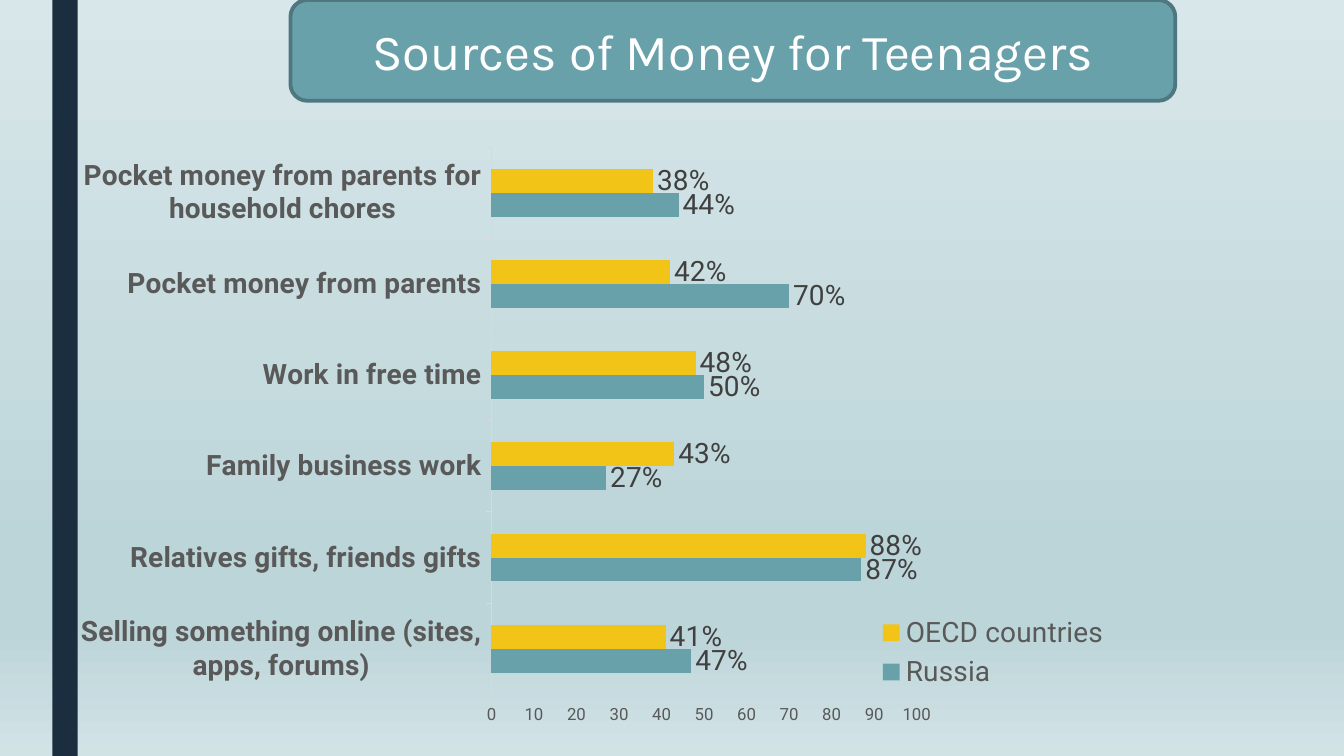
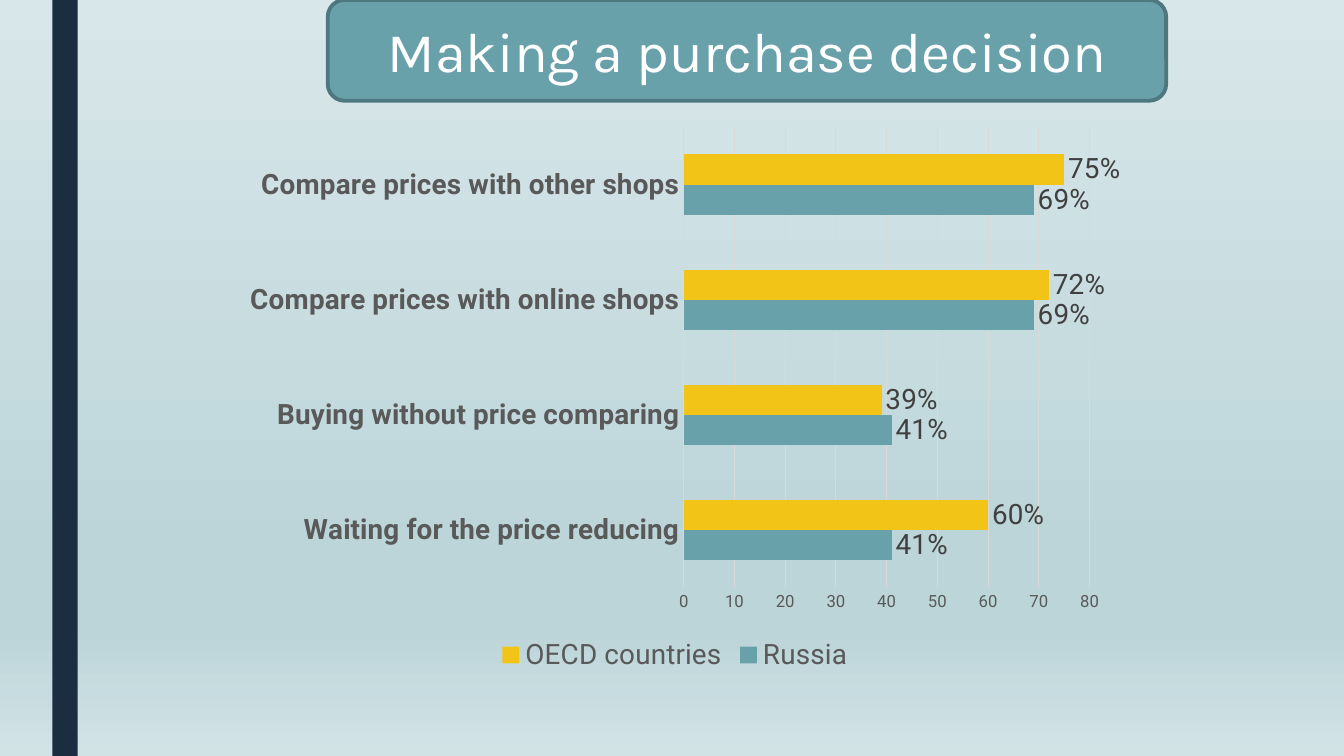
from copy import deepcopy

from lxml import etree
from pptx import Presentation
from pptx import util as u
from pptx.chart.data import CategoryChartData
from pptx.dml.color import RGBColor
from pptx.enum import chart as ch, shapes, text
from pptx.oxml.ns import qn

NAVY = RGBColor(0x1A, 0x2E, 0x40)
TEAL = RGBColor(0x69, 0xA1, 0xAB)
TEAL_EDGE = RGBColor(0x4E, 0x77, 0x7F)
YELLOW = RGBColor(0xF2, 0xC4, 0x18)
WHITE = RGBColor(0xFF, 0xFF, 0xFF)
LABEL_GREY = RGBColor(0x40, 0x40, 0x40)
AXIS_GREY = RGBColor(0x59, 0x59, 0x59)
RULE_GREY = RGBColor(0xD9, 0xD9, 0xD9)
SKY = [
    (0, RGBColor(0xD8, 0xE7, 0xE9)),
    (0.74, RGBColor(0xBC, 0xD5, 0xD9)),
    (0.83, RGBColor(0xBC, 0xD5, 0xD9)),
    (1, RGBColor(0xD2, 0xE3, 0xE6)),
]
SLIDE_W, SLIDE_H = u.Cm(33.87), u.Cm(19.05)
BANNER_H = u.Cm(2.54)
SERIES_COLORS = {"Russia": TEAL, "OECD countries": YELLOW}

BODY = {"name": "Roboto", "size": u.Pt(20)}
LABEL_FONT = BODY | {"color": LABEL_GREY}
LEGEND_FONT = BODY | {"color": AXIS_GREY}
CATEGORY_FONT = LEGEND_FONT | {"bold": True}
SCALE_FONT = LEGEND_FONT | {"size": u.Pt(12), "bold": False}
BANNER_FONT = {"name": "Karla", "color": WHITE}

SLIDES = [
    {
        "title": "Sources of Money for Teenagers",
        "title_size": 36,
        "banner": (7.32, 22.3),
        "frame": (1.93, 3.1, 26.14, 15.16),
        "plot": (0.4, 0.04, 0.41, 0.91),
        "legend": ch.XL_LEGEND_POSITION.RIGHT,
        "legend_box": (0.77, 0.81, 0.24, 0.14),
        "ticks": ch.XL_TICK_MARK.OUTSIDE,
        "grid": False,
        "maximum": 100,
        "categories": [
            "Selling something online (sites, apps, forums)",
            "Relatives gifts, friends gifts",
            "Family business work",
            "Work in free time",
            "Pocket money from parents",
            "Pocket money from parents for household chores",
        ],
        "values": {
            "Russia": [47, 87, 27, 50, 70, 44],
            "OECD countries": [41, 88, 43, 48, 42, 38],
        },
    },
    {
        "title": "Making a purchase decision",
        "title_size": 40,
        "banner": (8.26, 21.13),
        "frame": (5.89, 2.92, 22.35, 14.15),
        "plot": (0.51, 0.02, 0.46, 0.82),
        "legend": ch.XL_LEGEND_POSITION.BOTTOM,
        "legend_box": None,
        "ticks": ch.XL_TICK_MARK.NONE,
        "grid": True,
        "maximum": 80,
        "categories": [
            "Waiting for the price reducing",
            "Buying without price comparing",
            "Compare prices with online shops",
            "Compare prices with other shops",
        ],
        "values": {
            "Russia": [41, 41, 69, 69],
            "OECD countries": [60, 39, 72, 75],
        },
    },
]


def apply(target, formats):
    for name, value in formats.items():
        setattr(target, name, value)


def style_font(font, formats):
    apply(font, {k: v for k, v in formats.items() if k != "color"})
    font.color.rgb = formats["color"]


def style_rule(line):
    line.color.rgb = RULE_GREY
    line.width = u.Pt(0.75)


def paint_background(master):
    fill = master.background.fill
    fill.gradient()
    fill.gradient_angle = 270
    stop_list = master.element.find(".//" + qn("a:gsLst"))
    for _ in SKY[2:]:
        stop_list.append(deepcopy(stop_list[-1]))
    for stop, (position, color) in zip(fill.gradient_stops, SKY):
        stop.position = position
        stop.color.rgb = color


def add_block(slide, kind, box, color):
    block = slide.shapes.add_shape(kind, *box)
    block.shadow.inherit = False
    block.fill.solid()
    block.fill.fore_color.rgb = color
    return block


def add_side_band(slide, master):
    band = add_block(slide, shapes.MSO_SHAPE.RECTANGLE,
                     (u.Cm(1.32), 0, u.Cm(0.64), SLIDE_H), NAVY)
    band.line.fill.background()
    master.element.cSld.spTree.append(band.element)


def add_banner(slide, title, size, left, width):
    banner = add_block(slide, shapes.MSO_SHAPE.ROUNDED_RECTANGLE,
                       (u.Cm(left), 0, u.Cm(width), BANNER_H), TEAL)
    banner.line.color.rgb = TEAL_EDGE
    banner.line.width = u.Pt(2.75)
    frame = banner.text_frame
    apply(frame, {"word_wrap": True,
                  "vertical_anchor": text.MSO_ANCHOR.MIDDLE})
    paragraph = frame.paragraphs[0]
    paragraph.alignment = text.PP_ALIGN.CENTER
    run = paragraph.add_run()
    run.text = title
    style_font(run.font, BANNER_FONT | {"size": u.Pt(size)})


def place(parent, index, box, inner=False):
    for old in parent.findall(qn("c:layout")):
        parent.remove(old)
    layout = etree.Element(qn("c:layout"))
    manual = etree.SubElement(layout, qn("c:manualLayout"))
    settings = [("layoutTarget", "inner")] if inner else []
    settings += [("xMode", "edge"), ("yMode", "edge")]
    settings += zip("xywh", box)
    for tag, value in settings:
        etree.SubElement(manual, qn("c:" + tag)).set("val", str(value))
    parent.insert(index, layout)


def style_axes(chart, content):
    category, value = chart.category_axis, chart.value_axis
    for axis, font in ((category, CATEGORY_FONT), (value, SCALE_FONT)):
        apply(axis, {"major_tick_mark": content["ticks"],
                     "minor_tick_mark": ch.XL_TICK_MARK.NONE,
                     "has_major_gridlines": False})
        style_font(axis.tick_labels.font, font)
    style_rule(category.format.line)
    value.format.line.fill.background()
    apply(value, {"minimum_scale": 0, "maximum_scale": content["maximum"],
                  "major_unit": 10, "has_major_gridlines": content["grid"]})
    apply(value.tick_labels, {"number_format": "0",
                              "number_format_is_linked": False})
    if content["grid"]:
        style_rule(value.major_gridlines.format.line)


def style_series(series):
    series.format.fill.solid()
    series.format.fill.fore_color.rgb = SERIES_COLORS[series.name]
    labels = series.data_labels
    apply(labels, {"show_value": True,
                   "number_format": '0"%"',
                   "number_format_is_linked": False,
                   "position": ch.XL_LABEL_POSITION.OUTSIDE_END})
    style_font(labels.font, LABEL_FONT)


def add_legend(chart, position, box):
    chart.has_legend = True
    legend = chart.legend
    apply(legend, {"position": position, "include_in_layout": False})
    style_font(legend.font, LEGEND_FONT)
    if box:
        place(chart.element.find(".//" + qn("c:legend")), 1, box)


def add_survey_chart(slide, content):
    data = CategoryChartData()
    data.categories = content["categories"]
    for name, values in content["values"].items():
        data.add_series(name, values)
    box = [u.Cm(length) for length in content["frame"]]
    chart = slide.shapes.add_chart(
        ch.XL_CHART_TYPE.BAR_CLUSTERED, *box, data).chart
    chart.has_title = False
    apply(chart.font, BODY)
    apply(chart.plots[0], {"gap_width": 182, "overlap": 0,
                           "vary_by_categories": False})
    style_axes(chart, content)
    for series in chart.plots[0].series:
        style_series(series)
    add_legend(chart, content["legend"], content["legend_box"])
    place(chart.element.find(".//" + qn("c:plotArea")), 0,
          content["plot"], inner=True)


def main():
    deck = Presentation()
    apply(deck, {"slide_width": SLIDE_W, "slide_height": SLIDE_H})
    master = deck.slide_master
    paint_background(master)
    for content in SLIDES:
        slide = deck.slides.add_slide(deck.slide_layouts[6])
        if len(deck.slides) == 1:
            add_side_band(slide, master)
        add_banner(slide, content["title"], content["title_size"],
                   *content["banner"])
        add_survey_chart(slide, content)
    deck.save("out.pptx")


if __name__ == "__main__":
    main()
